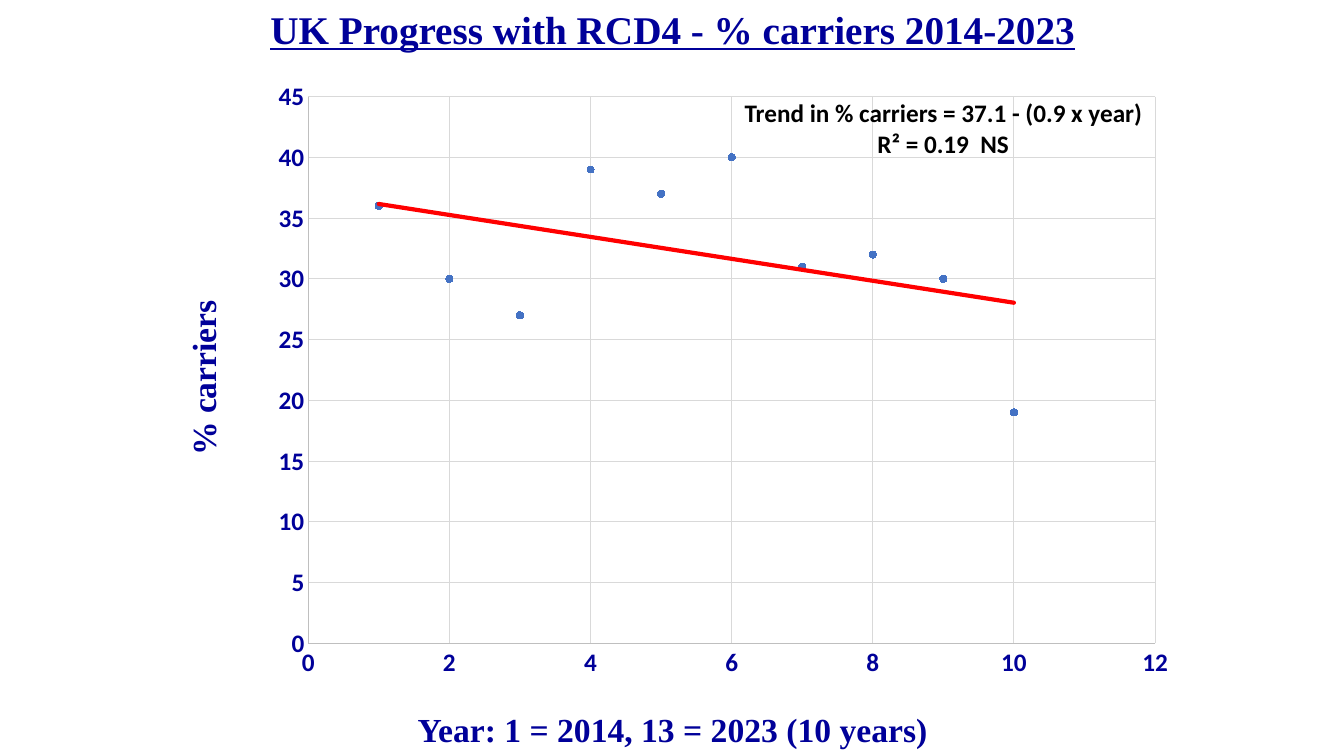
from dataclasses import dataclass

from lxml.etree import Element, SubElement
from pptx import Presentation
from pptx.chart.axis import ValueAxis
from pptx.chart.chart import Chart
from pptx.chart.data import XyChartData
from pptx.dml.color import RGBColor
from pptx.enum.chart import XL_CHART_TYPE, XL_MARKER_STYLE, XL_TICK_MARK
from pptx.enum.text import MSO_ANCHOR, MSO_AUTO_SIZE, PP_ALIGN
from pptx.oxml import parse_xml
from pptx.oxml.ns import nsdecls, qn
from pptx.shapes.autoshape import Shape
from pptx.slide import Slide
from pptx.util import Inches, Pt

NAVY = RGBColor(0x00, 0x00, 0x99)
BLACK = RGBColor(0x00, 0x00, 0x00)
MARKER_BLUE = RGBColor(0x44, 0x72, 0xC4)
TREND_RED = RGBColor(0xFF, 0x00, 0x00)
AXIS_GREY = RGBColor(0xBF, 0xBF, 0xBF)
GRID_GREY = RGBColor(0xD9, 0xD9, 0xD9)
SERIF = "Times New Roman"
SANS = "Calibri"
CARRIER_PERCENTAGES = (36, 30, 27, 39, 37, 40, 31, 32, 30, 19)
PLOT_LAYOUT = {"x": 0.07, "y": 0.032, "w": 0.908, "h": 0.872}


@dataclass(frozen=True)
class Box:
    left: float
    top: float
    width: float
    height: float
    rotation: float = 0


@dataclass(frozen=True)
class Label:
    text: str
    box: Box


AXIS_LABELS = (
    Label("Year: 1 = 2014, 13 = 2023 (10 years)", Box(1.67, 6.98, 10, 0.5)),
    Label("% carriers", Box(-0.63, 3.5, 5.28, 0.5, 270)),
)


def place(shape: Shape, box: Box) -> None:
    shape.left, shape.top = Inches(box.left), Inches(box.top)
    shape.width, shape.height = Inches(box.width), Inches(box.height)
    shape.rotation = box.rotation


def write_text(
    shape: Shape,
    text: str,
    *,
    size: float = 24,
    font: str = SERIF,
    color: RGBColor = NAVY,
    underline: bool | None = None,
    alignments: tuple[PP_ALIGN, ...] = (PP_ALIGN.CENTER,),
) -> None:
    frame = shape.text_frame
    frame.text = text
    frame.word_wrap = True
    frame.auto_size = MSO_AUTO_SIZE.SHAPE_TO_FIT_TEXT
    frame.vertical_anchor = MSO_ANCHOR.TOP
    for paragraph, alignment in zip(frame.paragraphs, alignments):
        paragraph.alignment = alignment
        paragraph.space_before = Pt(0)
        for run in paragraph.runs:
            run.font.name = font
            run.font.size = Pt(size)
            run.font.bold = True
            run.font.underline = underline
            run.font.color.rgb = color


def add_text_box(slide: Slide, box: Box) -> Shape:
    shape = slide.shapes.add_textbox(0, 0, 0, 0)
    place(shape, box)
    return shape


def format_axis(axis: ValueAxis, maximum: float, step: float) -> None:
    axis.minimum_scale = 0
    axis.maximum_scale = maximum
    axis.major_unit = step
    axis.major_tick_mark = XL_TICK_MARK.NONE
    axis.minor_tick_mark = XL_TICK_MARK.NONE
    axis.has_major_gridlines = True
    for line, color in (
        (axis.format.line, AXIS_GREY),
        (axis.major_gridlines.format.line, GRID_GREY),
    ):
        line.color.rgb = color
        line.width = Pt(0.75)
    font = axis.tick_labels.font
    font.name = SANS
    font.size = Pt(18)
    font.bold = True
    font.color.rgb = NAVY


def set_plot_layout(chart: Chart) -> None:
    plot_area = chart.element.find(".//" + qn("c:plotArea"))
    for layout in plot_area.findall(qn("c:layout")):
        plot_area.remove(layout)
    layout = Element(qn("c:layout"))
    manual = SubElement(layout, qn("c:manualLayout"))
    SubElement(manual, qn("c:layoutTarget"), val="inner")
    for side in ("x", "y"):
        SubElement(manual, qn(f"c:{side}Mode"), val="edge")
    for side, fraction in PLOT_LAYOUT.items():
        SubElement(manual, qn(f"c:{side}"), val=str(fraction))
    plot_area.insert(0, layout)


def add_trend_line(chart: Chart) -> None:
    trend_line = parse_xml(
        f'<c:trendline {nsdecls("c", "a")}><c:spPr>'
        f'<a:ln w="{Pt(3)}" cap="rnd"><a:solidFill><a:srgbClr val="{TREND_RED}"/>'
        "</a:solidFill></a:ln></c:spPr>"
        '<c:trendlineType val="linear"/><c:dispRSqr val="0"/><c:dispEq val="0"/>'
        "</c:trendline>"
    )
    chart.element.find(".//" + qn("c:xVal")).addprevious(trend_line)


def add_carrier_chart(slide: Slide, box: Box) -> None:
    data = XyChartData()
    carriers = data.add_series("Series 1")
    for year, percentage in enumerate(CARRIER_PERCENTAGES, start=1):
        carriers.add_data_point(year, percentage)
    chart = slide.shapes.add_chart(
        XL_CHART_TYPE.XY_SCATTER,
        Inches(box.left),
        Inches(box.top),
        Inches(box.width),
        Inches(box.height),
        data,
    ).chart
    chart.has_title = False
    chart.has_legend = False
    chart.font.name = SANS
    chart.font.size = Pt(10)
    chart.font.color.rgb = BLACK
    chart.plots[0].vary_by_categories = False
    series = chart.plots[0].series[0]
    series.smooth = False
    series.format.line.fill.background()
    series.marker.style = XL_MARKER_STYLE.CIRCLE
    series.marker.size = 5
    series.marker.format.fill.solid()
    series.marker.format.fill.fore_color.rgb = MARKER_BLUE
    series.marker.format.line.color.rgb = MARKER_BLUE
    format_axis(chart.category_axis, 12, 2)
    format_axis(chart.value_axis, 45, 5)
    set_plot_layout(chart)
    add_trend_line(chart)


def main() -> None:
    presentation = Presentation()
    presentation.slide_width = Inches(13.33)
    presentation.slide_height = Inches(7.5)
    slide = presentation.slides.add_slide(presentation.slide_layouts[5])
    title = slide.shapes.title
    place(title, Box(1.67, 0, 10, 0.57))
    write_text(
        title, "UK Progress with RCD4 - % carriers 2014-2023", size=28, underline=True
    )
    add_carrier_chart(slide, Box(2.41, 0.76, 9.25, 6.22))
    for label in AXIS_LABELS:
        write_text(add_text_box(slide, label.box), label.text)
    write_text(
        add_text_box(slide, Box(7.28, 0.92, 4.15, 0.71)),
        "Trend in % carriers = 37.1 - (0.9 x year)\nR² = 0.19  NS",
        size=18,
        font=SANS,
        color=BLACK,
        alignments=(PP_ALIGN.RIGHT, PP_ALIGN.CENTER),
    )
    presentation.save("out.pptx")


if __name__ == "__main__":
    main()
